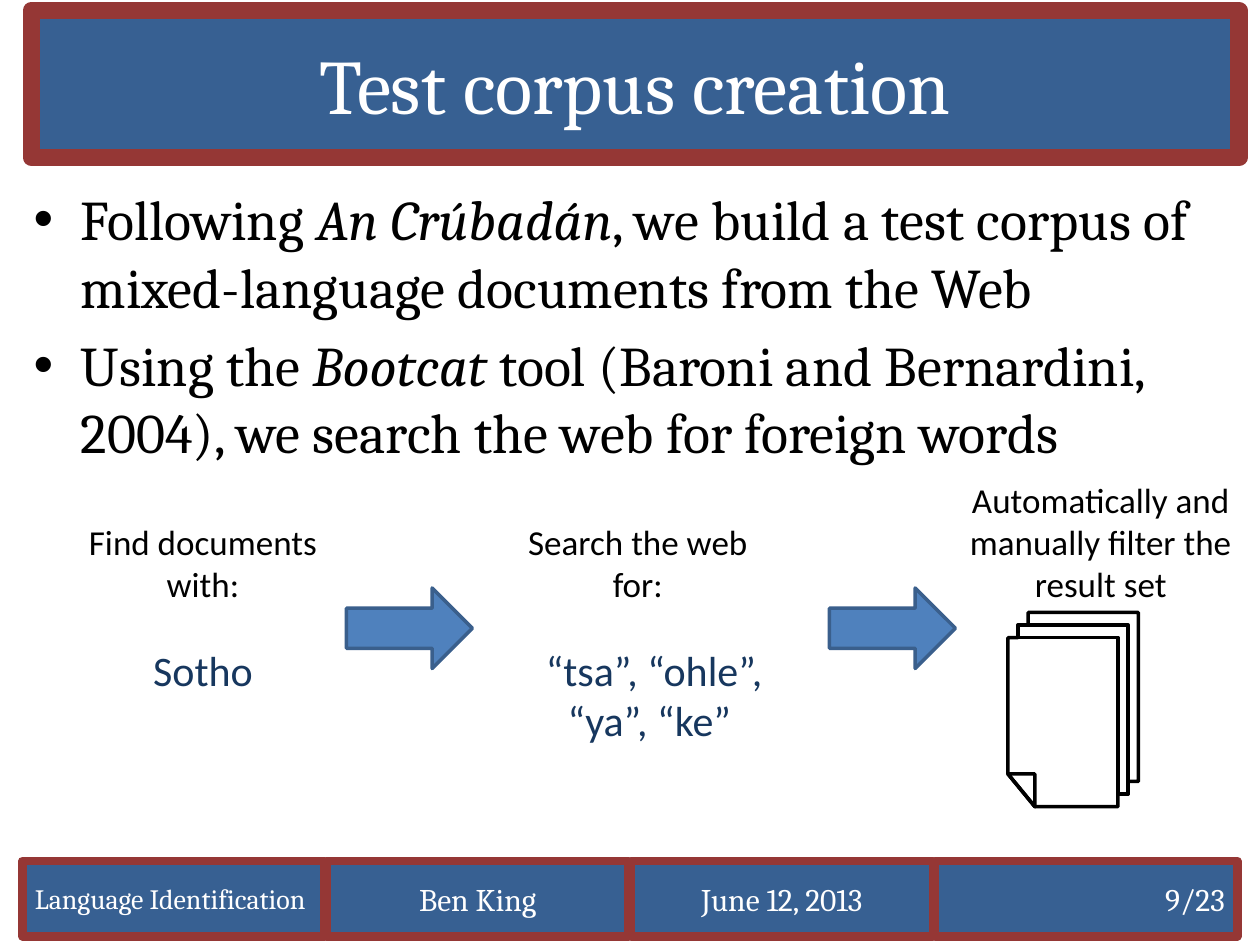
from pptx import Presentation
from pptx.dml.color import RGBColor
from pptx.enum.shapes import MSO_SHAPE
from pptx.enum.text import MSO_ANCHOR, MSO_AUTO_SIZE, PP_ALIGN
from pptx.util import Pt

RECTANGLE, RIGHT_ARROW = MSO_SHAPE.RECTANGLE, MSO_SHAPE.RIGHT_ARROW
LEFT, CENTER, RIGHT = PP_ALIGN.LEFT, PP_ALIGN.CENTER, PP_ALIGN.RIGHT
TOP, MIDDLE = MSO_ANCHOR.TOP, MSO_ANCHOR.MIDDLE
NO_FIT = MSO_AUTO_SIZE.NONE

WHITE = RGBColor(0xFF, 0xFF, 0xFF)
BLACK = RGBColor(0x00, 0x00, 0x00)
PANEL_BLUE = RGBColor(0x37, 0x60, 0x92)
FRAME_RED = RGBColor(0x95, 0x37, 0x35)
ARROW_BLUE = RGBColor(0x4F, 0x81, 0xBD)
ARROW_EDGE = RGBColor(0x3A, 0x5F, 0x8C)
TERM_BLUE = RGBColor(0x17, 0x37, 0x5E)

SERIF, SANS = "Cambria", "Calibri"


def set_values(target, values):
    for name, value in values.items():
        setattr(target, name, value)


def place(shape, box):
    names = ("left", "top", "width", "height")
    set_values(shape, {name: Pt(length) for name, length in zip(names, box)})


def paint(shape, fill, edge, weight):
    shape.fill.solid()
    shape.fill.fore_color.rgb = fill
    shape.line.color.rgb = edge
    shape.line.width = Pt(weight)


def add_run(paragraph, text, size, face, color, italic=None):
    run = paragraph.add_run()
    run.text = text
    set_values(run.font, {"size": Pt(size), "name": face, "italic": italic})
    run.font.color.rgb = color


def write(shape, text, size, face, color, align=CENTER, anchor=MIDDLE):
    frame = shape.text_frame
    set_values(frame, {"word_wrap": True, "auto_size": NO_FIT,
                       "vertical_anchor": anchor})
    frame.paragraphs[0].alignment = align
    add_run(frame.paragraphs[0], text, size, face, color)


def add_shape(slide, kind, box, fill, edge, weight):
    shape = slide.shapes.add_shape(kind, *map(Pt, box))
    shape.shadow.inherit = False
    paint(shape, fill, edge, weight)
    return shape


def add_label(slide, box, text, size, color):
    label = slide.shapes.add_textbox(*map(Pt, box))
    write(label, text, size, SANS, color, anchor=TOP)


def fill_title(title, box):
    place(title, box)
    paint(title, PANEL_BLUE, FRAME_RED, 10)
    write(title, "Test corpus creation", 44, SERIF, WHITE)


def fill_body(body, box):
    place(body, box)
    body.text_frame.auto_size = NO_FIT
    # Each point: plain start, italic name, plain rest
    points = (
        ("Following ", "An Crúbadán",
         ", we build a test corpus of mixed-language documents from the Web"),
        ("Using the ", "Bootcat ",
         "tool (Baroni and Bernardini, 2004), we search the web for foreign words"),
    )
    for index, (start, name, rest) in enumerate(points):
        frame = body.text_frame
        paragraph = frame.add_paragraph() if index else frame.paragraphs[0]
        for text, italic in ((start, False), (name, True), (rest, False)):
            add_run(paragraph, text, 32, SERIF, BLACK, italic)


def add_footer(slide, box):
    left, top, width, height = box
    cells = (
        ("Language Identification", 16, LEFT),
        ("Ben King", 18, CENTER),
        ("June 12, 2013", 18, CENTER),
        ("9/23", 18, RIGHT),
    )
    gap = 1.2
    cell_width = (width - gap * (len(cells) - 1)) / len(cells)
    for index, (text, size, align) in enumerate(cells):
        cell_box = (left + index * (cell_width + gap), top, cell_width, height)
        cell = add_shape(slide, RECTANGLE, cell_box, PANEL_BLUE, FRAME_RED, 5)
        write(cell, text, size, SERIF, WHITE, align)


def add_pages(slide, box):
    left, top, width, height = box
    right, bottom = left + width, top + height
    step_x, step_y = 5.8, 7.2  # offset between stacked sheets
    fold_x, fold_y = 15.4, 18.7

    front_top = top + 2 * step_y
    front_right = right - 2 * step_x
    middle_left, middle_top = left + step_x, top + step_y
    middle_right, middle_bottom = right - step_x, bottom - step_y
    back_left = left + 2 * step_x
    fold_left = (left, bottom - fold_y)
    fold_corner = (left + fold_x, bottom - fold_y)
    fold_bottom = (left + fold_x, bottom)

    outline = [
        fold_left, (left, front_top), (middle_left, front_top),
        (middle_left, middle_top), (back_left, middle_top), (back_left, top),
        (right, top), (right, bottom - 2 * step_y),
        (middle_right, bottom - 2 * step_y), (middle_right, middle_bottom),
        (front_right, middle_bottom), (front_right, bottom), fold_bottom,
    ]
    middle_sheet = [
        (back_left, middle_top), (middle_right, middle_top),
        (middle_right, middle_bottom), (front_right, middle_bottom),
        (front_right, front_top), (middle_left, front_top),
        (middle_left, middle_top),
    ]
    fold = [fold_left, fold_corner, fold_bottom]

    builder = slide.shapes.build_freeform(*map(Pt, outline[0]))
    for contour in (outline, middle_sheet, fold):
        corners = [(Pt(x), Pt(y)) for x, y in contour]
        if contour is not outline:
            builder.move_to(*corners[0])
        builder.add_line_segments(corners[1:], close=True)
    pages = builder.convert_to_shape()
    pages.shadow.inherit = False
    paint(pages, WHITE, BLACK, 2)


def add_workflow(slide, box):
    left, top, width, height = box
    step_width, caption_bottom = 164, 79.5
    # Captions share one bottom edge
    captions = (
        (0, 55.5, "Find documents with:"),
        (248.5, 55.5, "Search the web for:"),
        (width - step_width, 79.5,
         "Automatically and manually filter the result set"),
    )
    for x, tall, text in captions:
        add_label(slide, (left + x, top + caption_bottom - tall,
                          step_width, tall), text, 20, BLACK)

    # Language and its search words
    terms = (
        (19, 126, 36, "Sotho"),
        (267, 145.5, 65.5, "“tsa”, “ohle”, “ya”, “ke” "),
    )
    for x, wide, tall, text in terms:
        add_label(slide, (left + x, top + 94.5, wide, tall), text, 24, TERM_BLUE)

    # Arrows between the steps
    for x in (164, 440):
        add_shape(slide, RIGHT_ARROW, (left + x, top + 66, 72, 46),
                  ARROW_BLUE, ARROW_EDGE, 2)

    # Resulting documents
    add_pages(slide, (left + 542, top + 80, 74.5, height - 80))


def main():
    deck = Presentation()
    deck.slide_width, deck.slide_height = Pt(720), Pt(540)
    slide = deck.slides.add_slide(deck.slide_layouts[1])
    add_footer(slide, (12.8, 492, 694.2, 43))
    fill_title(slide.shapes.title, (18, 6, 690, 84))
    fill_body(slide.placeholders[1], (12, 102, 696, 380))
    add_workflow(slide, (34, 270, 677, 191))
    deck.save("out.pptx")


if __name__ == "__main__":
    main()
